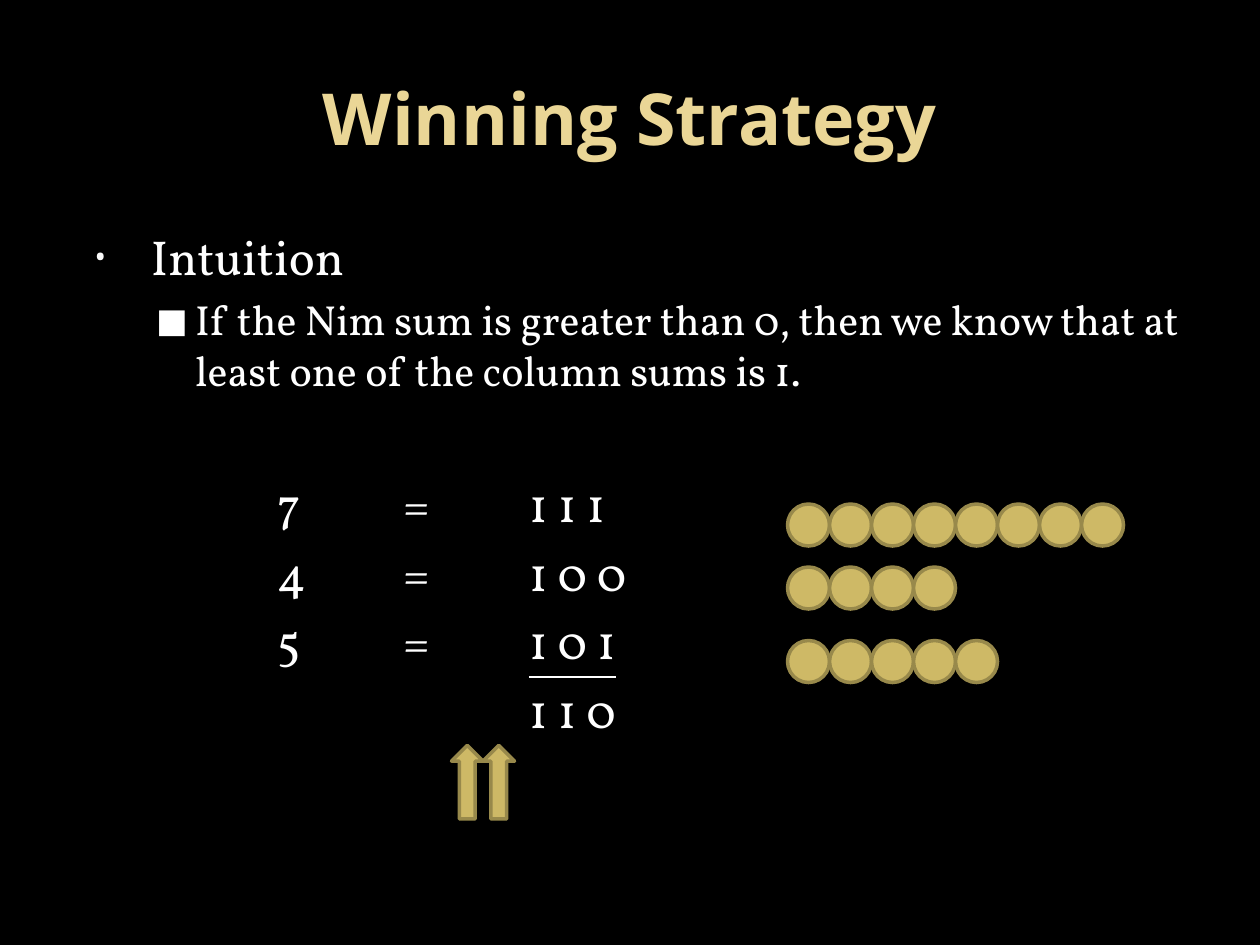
import pptx
import pptx.dml.color
import pptx.enum.shapes
import pptx.enum.text
import pptx.oxml.ns
import pptx.util
from lxml import etree

RGBColor = pptx.dml.color.RGBColor
Inches, Pt = pptx.util.Inches, pptx.util.Pt
MSO_SHAPE = pptx.enum.shapes.MSO_SHAPE

BLACK = RGBColor(0x00, 0x00, 0x00)
WHITE = RGBColor(0xFF, 0xFF, 0xFF)
BULLET_WHITE = RGBColor(0xF9, 0xF9, 0xF9)
CREAM = RGBColor(0xEA, 0xD6, 0x96)
GOLD = RGBColor(0xCE, 0xB9, 0x66)
DARK_GOLD = RGBColor(0x98, 0x89, 0x4B)

GRID = 1 / 12  # inches per grid unit
COIN = 4       # grid units per coin
LARGE, SMALL = 28, 24
GAP_SHARE = 0.2  # space before a paragraph, as a share of its text size
SKIPPED_ROW = 39.4

# before the binary digits, the digits, underlined or not
NIM_ROWS = [
    ("\t\t7\t=\t", "1 1 1", False),
    ("\t\t4\t=\t", "1 0 0", False),
    ("\t\t5\t=\t", "1 0 1", True),
    ("\t\t\t\t", "1 1 0", False),
]
# top in grid units, number of coins
PILES = [(48, 8), (54, 4), (61, 5)]


def add_text_area(slide, left, top, width, height):
    frame = slide.shapes.add_textbox(
        Inches(left), Inches(top), Inches(width), Inches(height)).text_frame
    frame.word_wrap = True
    return frame


def format_run(run, font, size, color, bold=False, underline=False):
    run.font.name = font
    run.font.size = Pt(size)
    run.font.color.rgb = color
    run.font.bold = bold
    run.font.underline = underline


def set_indent(paragraph, margin, hanging, bullet=None, color=None, percent=100):
    """Give the paragraph a hanging indent, inch tabs and, if asked for, a bullet."""
    properties = paragraph._p.get_or_add_pPr()
    properties.set("marL", str(Inches(margin)))
    properties.set("indent", str(-Inches(hanging)))
    properties.set("defTabSz", str(Inches(1)))
    qn = pptx.oxml.ns.qn
    if bullet is None:
        etree.SubElement(properties, qn("a:buNone"))
        return
    bullet_color = etree.SubElement(properties, qn("a:buClr"))
    etree.SubElement(bullet_color, qn("a:srgbClr"), val=str(color))
    etree.SubElement(properties, qn("a:buSzPct"), val=str(percent * 1000))
    etree.SubElement(properties, qn("a:buFont"), typeface="Open Sans")
    etree.SubElement(properties, qn("a:buChar"), char=bullet)


def add_title(slide, left, top, width, height):
    frame = add_text_area(slide, left, top, width, height)
    frame.vertical_anchor = pptx.enum.text.MSO_ANCHOR.MIDDLE
    frame.text = "Winning Strategy"
    heading = frame.paragraphs[0]
    heading.alignment = pptx.enum.text.PP_ALIGN.CENTER
    format_run(heading.runs[0], "Open Sans", 41, CREAM, bold=True)


def add_body(slide, left, top, width, height):
    """Intuition, its explanation and the column sums in binary."""
    frame = add_text_area(slide, left, top, width, height)
    intuition = frame.paragraphs[0]
    intuition.text = "Intuition"
    intuition.space_before = Pt(LARGE * GAP_SHARE)
    set_indent(intuition, 0.6, 0.45, "•", BULLET_WHITE, 65)
    format_run(intuition.runs[0], "Vollkorn", LARGE, WHITE)

    explanation = frame.add_paragraph()
    explanation.text = ("If the Nim sum is greater than 0, then we know that "
                        "at least one of the column sums is 1.")
    explanation.level = 1
    explanation.space_before = Pt(SMALL * GAP_SHARE)
    set_indent(explanation, 0.95, 0.31, "■", WHITE, 80)
    format_run(explanation.runs[0], "Vollkorn", SMALL, WHITE)

    for index, (lead, digits, underlined) in enumerate(NIM_ROWS):
        row = frame.add_paragraph()
        row.space_before = Pt(LARGE * GAP_SHARE + (SKIPPED_ROW if index == 0 else 0))
        set_indent(row, 0.6, 0.45)
        for words, underline in ((lead, False), (digits, underlined)):
            run = row.add_run()
            run.text = words
            format_run(run, "Vollkorn", LARGE, WHITE, underline=underline)


def add_gold_row(slide, kind, left, top, width, height, count):
    """Place equal gold shapes side by side; lengths in grid units."""
    for index in range(count):
        piece = slide.shapes.add_shape(
            kind, Inches((left + index * width) * GRID), Inches(top * GRID),
            Inches(width * GRID), Inches(height * GRID))
        piece.shadow.inherit = False
        piece.fill.solid()
        piece.fill.fore_color.rgb = GOLD
        piece.line.color.rgb = DARK_GOLD
        piece.line.width = Pt(2)


def main():
    presentation = pptx.Presentation()
    presentation.slide_width = Inches(10)
    presentation.slide_height = Inches(7.5)
    slide = presentation.slides.add_slide(presentation.slide_layouts[6])
    slide.background.fill.solid()
    slide.background.fill.fore_color.rgb = BLACK

    add_title(slide, 0.5, 0.3, 9, 1.25)
    add_body(slide, 0.5, 1.75, 9, 5.15)
    add_gold_row(slide, MSO_SHAPE.UP_ARROW, 43, 71, 3, 7, 2)
    for top, count in PILES:
        add_gold_row(slide, MSO_SHAPE.OVAL, 75, top, COIN, COIN, count)
    presentation.save("out.pptx")


if __name__ == "__main__":
    main()
